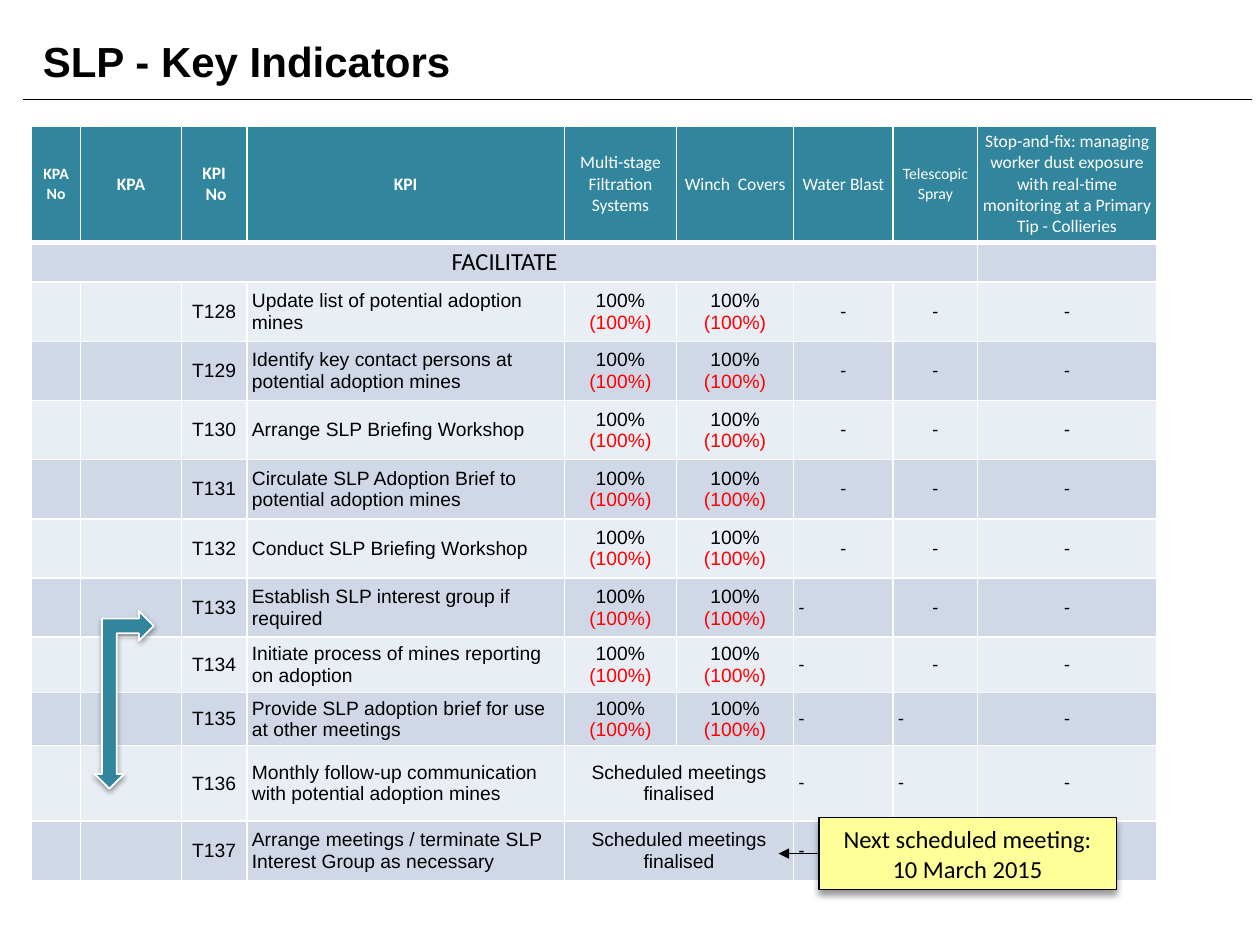
import lxml.etree
import pptx
import pptx.dml.color
import pptx.enum.shapes
import pptx.enum.text
import pptx.oxml.ns
import pptx.util

Inches, Pt = pptx.util.Inches, pptx.util.Pt
ALIGN = pptx.enum.text.PP_ALIGN
MIDDLE = pptx.enum.text.MSO_ANCHOR.MIDDLE
qn = pptx.oxml.ns.qn

COLORS = {
    "black": "000000", "white": "FFFFFF", "red": "FF0000", "teal": "31859C",
    "band_dark": "D0D8E8", "band_light": "E9EDF4", "yellow": "FFFF99",
}
COLUMN_WIDTHS = [0.39, 0.8, 0.52, 2.52, 0.89, 0.93, 0.79, 0.67, 1.42]
ROW_HEIGHTS = [0.91, 0.31] + [0.47] * 6 + [0.44, 0.41, 0.6, 0.47]
# Each heading: lines, size, bold
HEADINGS = [
    (["KPA No"], 9, True),
    (["KPA"], 10, True),
    (["KPI", " No"], 10, True),
    (["KPI"], 10, True),
    (["Multi-stage Filtration Systems"], 10, False),
    (["Winch  Covers"], 10, False),
    (["Water Blast"], 10, False),
    (["Telescopic Spray"], 9, False),
    (["Stop-and-fix: managing worker dust exposure with real-time "
      "monitoring at a Primary Tip - Collieries"], 10, False),
]
FIRST_KPI = 128
INDICATORS = [
    "Update list of potential adoption mines",
    "Identify key contact persons at potential adoption mines",
    "Arrange SLP Briefing Workshop",
    "Circulate SLP Adoption Brief to potential adoption mines",
    "Conduct SLP Briefing Workshop",
    "Establish SLP interest group if required",
    "Initiate process of mines reporting on adoption",
    "Provide SLP adoption brief for use at other meetings",
    "Monthly follow-up communication with potential adoption mines",
    "Arrange meetings / terminate SLP Interest Group as necessary",
]
FIRST_MEETING_KPI = 136
# Column: first KPI whose dash is left-aligned
DASH_LEFT_FROM = {6: 133, 7: 135, 8: 138}


def rgb(name):
    return pptx.dml.color.RGBColor.from_string(COLORS[name])


def write(frame, lines, size, font="Calibri", bold=False, align=ALIGN.CENTER):
    """Fill a text frame with one paragraph per (text, colour) pair."""
    for index, (text, color) in enumerate(lines):
        paragraph = frame.add_paragraph() if index else frame.paragraphs[0]
        paragraph.alignment = align
        run = paragraph.add_run()
        run.text = text
        run.font.size, run.font.name, run.font.bold = Pt(size), font, bold
        run.font.color.rgb = rgb(color)


def add_shadow(shape, opacity, blur, distance):
    """Give a shape a black shadow that falls straight down."""
    shape.shadow.inherit = False
    effects = shape._element.spPr.find(qn("a:effectLst"))
    shadow = lxml.etree.SubElement(
        effects, qn("a:outerShdw"), blurRad=str(Pt(blur)), dist=str(Pt(distance)),
        dir="5400000", rotWithShape="0")
    color = lxml.etree.SubElement(shadow, qn("a:srgbClr"), val=COLORS["black"])
    lxml.etree.SubElement(color, qn("a:alpha"), val=str(opacity * 1000))


def add_rule(slide, x1, y1, x2, y2):
    rule = slide.shapes.add_connector(
        pptx.enum.shapes.MSO_CONNECTOR.STRAIGHT,
        Inches(x1), Inches(y1), Inches(x2), Inches(y2))
    rule.line.color.rgb = rgb("black")
    rule.line.width = Pt(0.75)
    lxml.etree.SubElement(rule._element.spPr, qn("a:effectLst"))
    return rule


def add_block(slide, preset, box, fill, line, line_width):
    block = slide.shapes.add_shape(preset, *map(Inches, box))
    block.fill.solid()
    block.fill.fore_color.rgb = rgb(fill)
    block.line.color.rgb = rgb(line)
    block.line.width = Pt(line_width)
    return block


def format_title(title, left, top, width, height):
    title.left, title.top = Inches(left), Inches(top)
    title.width, title.height = Inches(width), Inches(height)
    title.text_frame.vertical_anchor = MIDDLE
    write(title.text_frame, [("SLP - Key Indicators", "black")], 24, "Arial",
          True, ALIGN.LEFT)


def format_cell(cell, fill, bottom_width=1):
    """Set margins, white borders, fill and the size of an empty cell."""
    cell.margin_left = cell.margin_right = Inches(0.04)
    cell.margin_top = cell.margin_bottom = Inches(0.04)
    cell.vertical_anchor = MIDDLE
    properties = cell._tc.get_or_add_tcPr()
    for side, width in (("L", 1), ("R", 1), ("T", 1), ("B", bottom_width)):
        border = lxml.etree.SubElement(properties, qn("a:ln" + side), w=str(Pt(width)))
        solid = lxml.etree.SubElement(border, qn("a:solidFill"))
        lxml.etree.SubElement(solid, qn("a:srgbClr"), val=COLORS["white"])
    cell.fill.solid()
    cell.fill.fore_color.rgb = rgb(fill)
    if not cell.text_frame.text:
        lxml.etree.SubElement(cell.text_frame.paragraphs[0]._p,
                              qn("a:endParaRPr"), sz="1100")


def fill_indicator_row(table, row, number, indicator):
    def put(column, lines, font="Arial", align=ALIGN.CENTER):
        write(table.cell(row, column).text_frame, lines, 11, font, align=align)

    put(2, [(f"T{number}", "black")])
    put(3, [(indicator, "black")], align=ALIGN.LEFT)
    if number >= FIRST_MEETING_KPI:
        table.cell(row, 4).merge(table.cell(row, 5))
        put(4, [("Scheduled meetings finalised", "black")])
    else:
        for column in (4, 5):
            put(column, [("100%", "black"), ("(100%)", "red")])
    for column, left_from in DASH_LEFT_FROM.items():
        put(column, [("-", "black")], "Calibri",
            ALIGN.LEFT if number >= left_from else ALIGN.CENTER)


def add_indicator_table(slide, left, top):
    table = slide.shapes.add_table(
        len(ROW_HEIGHTS), len(COLUMN_WIDTHS), Inches(left), Inches(top),
        Inches(sum(COLUMN_WIDTHS)), Inches(sum(ROW_HEIGHTS))).table
    for column, width in zip(table.columns, COLUMN_WIDTHS):
        column.width = Inches(width)
    for row, height in zip(table.rows, ROW_HEIGHTS):
        row.height = Inches(height)

    for column, (lines, size, bold) in enumerate(HEADINGS):
        write(table.cell(0, column).text_frame,
              [(line, "white") for line in lines], size, bold=bold)
    table.cell(1, 0).merge(table.cell(1, 7))
    write(table.cell(1, 0).text_frame, [("FACILITATE", "black")], 14)
    for index, indicator in enumerate(INDICATORS):
        fill_indicator_row(table, index + 2, FIRST_KPI + index, indicator)

    for row_index, row in enumerate(table.rows):
        band = "band_dark" if row_index % 2 else "band_light"
        for cell in row.cells:
            if row_index == 0:
                format_cell(cell, "teal", bottom_width=3)
            else:
                format_cell(cell, band)


def add_range_arrow(slide, box):
    arrow = add_block(slide, pptx.enum.shapes.MSO_SHAPE.LEFT_UP_ARROW, box,
                      "teal", "white", 1)
    arrow.rotation = 180
    add_shadow(arrow, 38, 3.1, 1.6)


def add_meeting_callout(slide, left, top, width, height):
    """Add the meeting note and its pointer to the left."""
    note = add_block(slide, pptx.enum.shapes.MSO_SHAPE.RECTANGLE,
                     (left, top, width, height), "yellow", "black", 0.75)
    add_shadow(note, 40, 4, 3)
    note.text_frame.word_wrap = True
    note.text_frame.vertical_anchor = MIDDLE
    write(note.text_frame, [("Next scheduled meeting: 10 March 2015", "black")], 14)

    middle = top + height / 2
    pointer = add_rule(slide, left, middle, left - 0.32, middle)
    pointer.begin_connect(note, 1)
    lxml.etree.SubElement(pointer.line._get_or_add_ln(), qn("a:tailEnd"), type="triangle")


def main():
    deck = pptx.Presentation()
    deck.slide_width, deck.slide_height = Inches(10), Inches(7.5)
    slide = deck.slides.add_slide(deck.slide_layouts[5])
    format_title(slide.shapes.title, 0.24, 0.17, 9.84, 0.63)
    add_rule(slide, 0.18, 0.79, 9.94, 0.79)
    add_indicator_table(slide, 0.25, 1)
    add_range_arrow(slide, (0.75, 4.85, 0.47, 1.41))
    add_meeting_callout(slide, 6.5, 6.49, 2.36, 0.57)
    deck.save("out.pptx")


if __name__ == "__main__":
    main()
